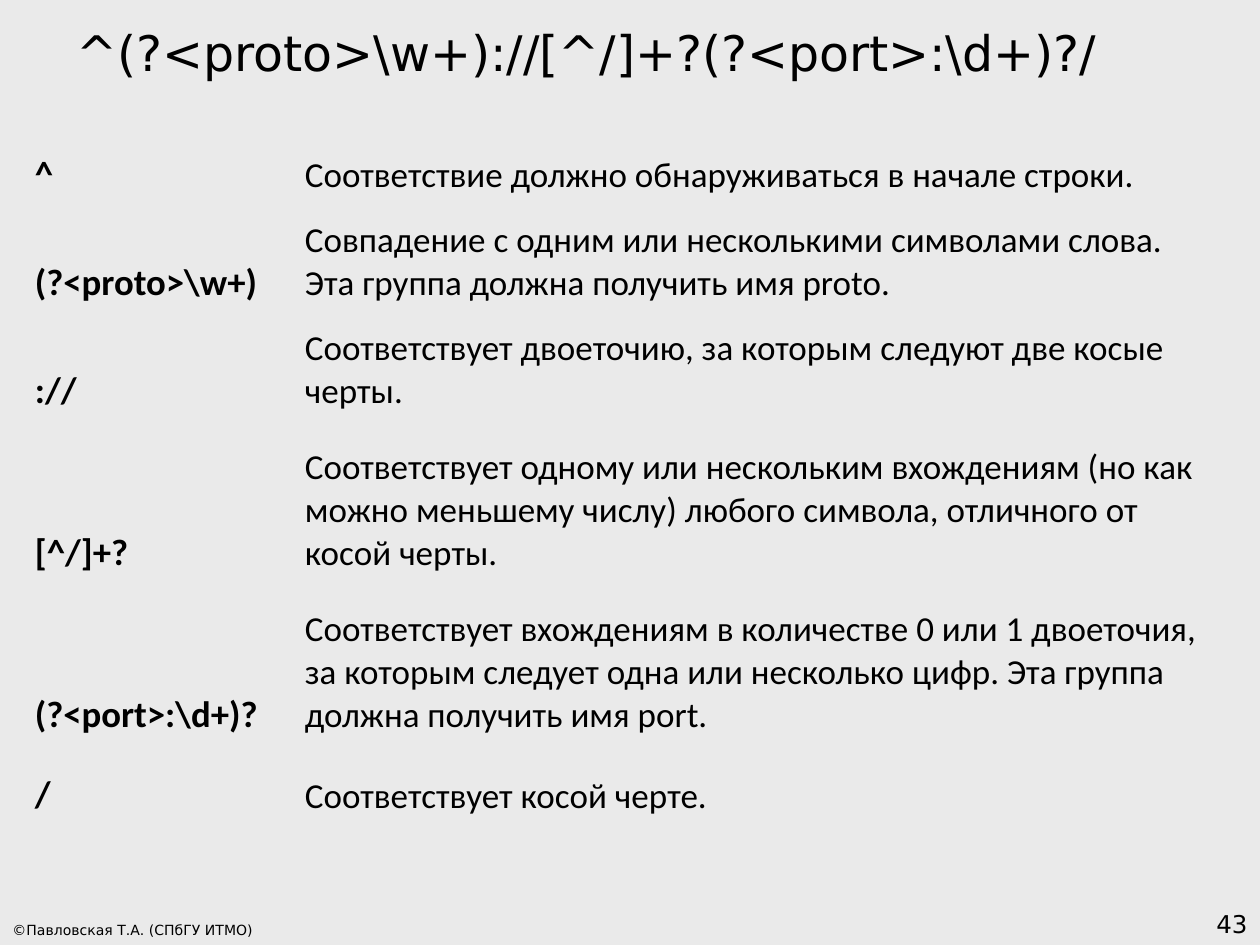
"""Build a slide that explains a URL regular expression part by part."""
import pptx
import pptx.dml.color
import pptx.enum.text
import pptx.util

ANCHOR = pptx.enum.text.MSO_ANCHOR
ALIGN = pptx.enum.text.PP_ALIGN
EMU_PER_PX = 914400 // 126
SLIDE_SIZE = (1260, 945)
BACKGROUND, INK = "EAEAEA", "000000"
NO_GRID_STYLE = "{2D5ABB26-0587-4C30-8999-92F81FD0307C}"

TEXT_BOXES = [
    (r"^(?<proto>\w+)://[^/]+?(?<port>:\d+)?/", (64, 16, 1181, 72), 28, ALIGN.LEFT),
    ("©Павловская Т.А. (СПбГУ ИТМО)", (0, 910, 392, 35), 8, ALIGN.LEFT),
    ("43", (998, 882, 262, 63), 14, ALIGN.RIGHT),
]

TABLE_ORIGIN = (34, 125)
COLUMN_WIDTHS = (270, 911)
COLUMN_FORMATS = (
    {"name": "Calibri", "size": pptx.util.Pt(21), "bold": True},
    {"name": "Calibri", "size": pptx.util.Pt(20), "bold": False},
)
CELL_FORMAT = {
    "vertical_anchor": ANCHOR.BOTTOM,
    "margin_left": EMU_PER_PX,
    "margin_right": EMU_PER_PX,
    "margin_top": EMU_PER_PX,
    "margin_bottom": 0,
}
PATTERN_ROWS = [
    (72, "^", "Соответствие должно обнаруживаться в начале строки."),
    (108, r"(?<proto>\w+)", "Совпадение с одним или несколькими символами слова. "
     "Эта группа должна получить имя proto."),
    (108, "://", "Соответствует двоеточию, за которым следуют две косые черты."),
    (162, "[^/]+?", "Соответствует одному или нескольким вхождениям (но как можно "
     "меньшему числу) любого символа, отличного от косой черты."),
    (162, r"(?<port>:\d+)?", "Соответствует вхождениям в количестве 0 или 1 двоеточия, "
     "за которым следует одна или несколько цифр. Эта группа должна получить имя port."),
    (81, "/", "Соответствует косой черте."),
]


def px(*lengths):
    return [length * EMU_PER_PX for length in lengths]


def color(hex_string):
    return pptx.dml.color.RGBColor.from_string(hex_string)


def apply_format(target, values):
    for name, value in values.items():
        setattr(target, name, value)


def write_text(text_frame, text, font_format, alignment=ALIGN.LEFT):
    paragraph = text_frame.paragraphs[0]
    paragraph.alignment = alignment
    run = paragraph.add_run()
    run.text = text
    apply_format(run.font, font_format)
    run.font.color.rgb = color(INK)


def add_text_box(slide, text, box, size, alignment):
    text_frame = slide.shapes.add_textbox(*px(*box)).text_frame
    apply_format(text_frame, {"word_wrap": True, "vertical_anchor": ANCHOR.BOTTOM})
    font_format = {"name": "DejaVu Sans", "size": pptx.util.Pt(size)}
    write_text(text_frame, text, font_format, alignment)


def add_pattern_table(slide):
    size = (sum(COLUMN_WIDTHS), sum(row[0] for row in PATTERN_ROWS))
    frame = slide.shapes.add_table(
        len(PATTERN_ROWS), len(COLUMN_WIDTHS), *px(*TABLE_ORIGIN, *size))
    table = frame.table
    apply_format(table, {"first_row": False, "horz_banding": False})
    table._tbl.tblPr.find(pptx.oxml.ns.qn("a:tableStyleId")).text = NO_GRID_STYLE
    for column, width in zip(table.columns, px(*COLUMN_WIDTHS)):
        column.width = width
    for row, (height, *texts) in zip(table.rows, PATTERN_ROWS):
        row.height = px(height)[0]
        for cell, text, font_format in zip(row.cells, texts, COLUMN_FORMATS):
            cell.fill.background()
            apply_format(cell, CELL_FORMAT)
            write_text(cell.text_frame, text, font_format)


def main():
    presentation = pptx.Presentation()
    presentation.slide_width, presentation.slide_height = px(*SLIDE_SIZE)
    slide = presentation.slides.add_slide(presentation.slide_layouts[6])
    slide.background.fill.solid()
    slide.background.fill.fore_color.rgb = color(BACKGROUND)
    for text_box in TEXT_BOXES:
        add_text_box(slide, *text_box)
    add_pattern_table(slide)
    presentation.save("out.pptx")


if __name__ == "__main__":
    main()
